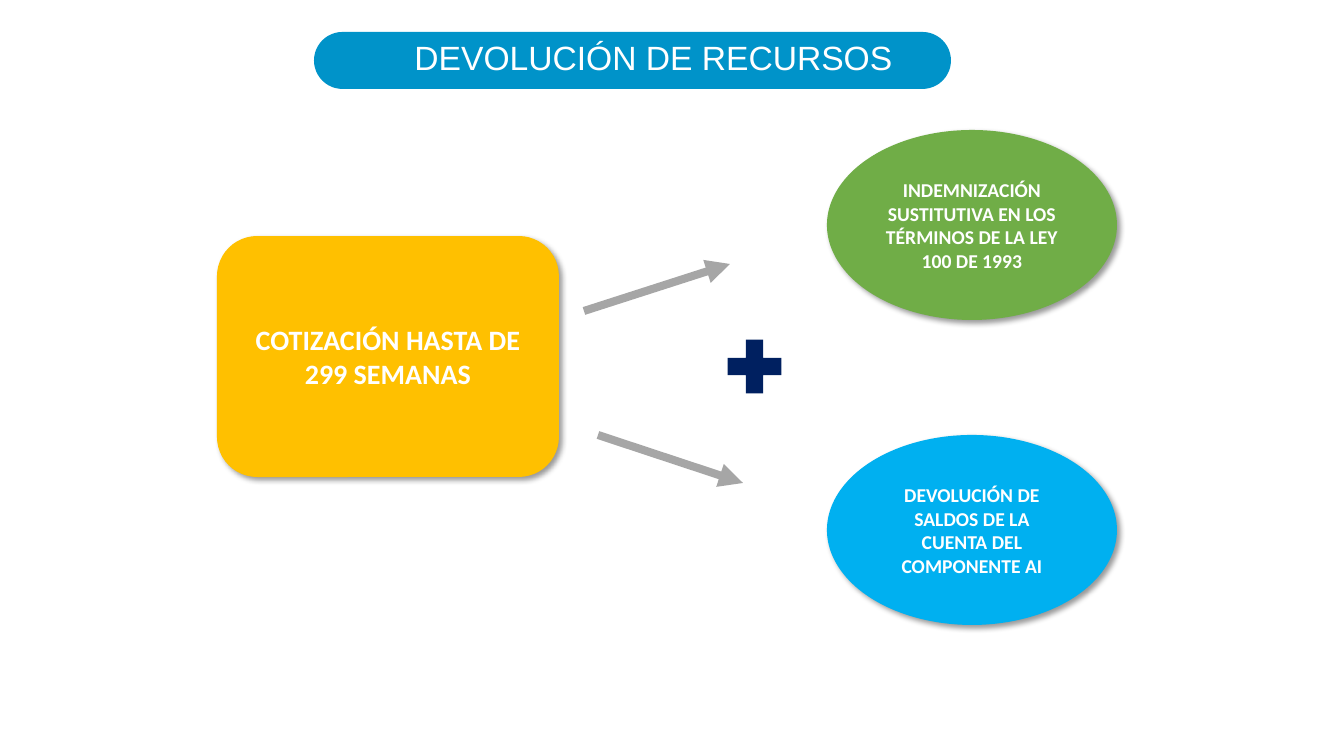
"""Build the slide on the return of pension funds."""
from lxml.etree import SubElement as Sub
from pptx import Presentation
from pptx.dml.color import RGBColor
from pptx.enum.shapes import MSO_CONNECTOR as Line, MSO_SHAPE as Kind
from pptx.enum.text import MSO_ANCHOR as Anchor, MSO_AUTO_SIZE as Fit, PP_ALIGN as Align
from pptx.oxml.ns import qn
from pptx.util import Pt

SCALE = 914400 / 100.8


def px(*nums):
    return [round(num * SCALE) for num in nums]


def paint(color, value):
    color.rgb = RGBColor.from_string(value)


def write(shape, text, size=14, font="Calibri", bold=True, anchor=Anchor.MIDDLE):
    frame = shape.text_frame
    frame.text = text
    frame.word_wrap = True
    frame.auto_size = Fit.NONE
    frame.vertical_anchor = anchor
    para = frame.paragraphs[0]
    para.alignment = Align.CENTER
    style = para.runs[0].font
    style.size, style.name, style.bold = Pt(size), font, bold
    paint(style.color, "FFFFFF")


def add_form(slide, kind, box, fill):
    shape = slide.shapes.add_shape(kind, *px(*box))
    shape.fill.solid()
    paint(shape.fill.fore_color, fill)
    shape.line.fill.background()
    shape.shadow.inherit = False
    return shape


def add_card(slide, kind, box, fill, text, **style):
    card = add_form(slide, kind, box, fill)
    effects = card.element.spPr.find(qn("a:effectLst"))
    shade = Sub(effects, qn("a:outerShdw"), blurRad=str(Pt(4)), dist=str(Pt(3)),
                dir="2700000", algn="tl", rotWithShape="0")
    color = Sub(shade, qn("a:srgbClr"), val="000000")
    Sub(color, qn("a:alpha"), val="40000")
    write(card, text, **style)


def add_arrow(slide, ends):
    arrow = slide.shapes.add_connector(Line.STRAIGHT, *px(*ends))
    arrow.line.width = Pt(5.75)
    paint(arrow.line.color, "A6A6A6")
    props = arrow.element.spPr
    Sub(props.find(qn("a:ln")), qn("a:tailEnd"), type="triangle")
    Sub(props, qn("a:effectLst"))


def add_title(slide, text):
    bar = add_form(slide, Kind.ROUNDED_RECTANGLE, (314, 32, 637, 57), "0093C9")
    bar.adjustments[0] = 0.5
    title = slide.shapes.title
    title.left, title.top, title.width, title.height = px(335, 32, 637, 50)
    write(title, text, size=24, font="Arial", bold=False, anchor=Anchor.TOP)
    title.element.addprevious(bar.element)


def main():
    deck = Presentation()
    deck.slide_width, deck.slide_height = px(1344, 756)
    slide = deck.slides.add_slide(deck.slide_layouts[5])
    add_title(slide, "DEVOLUCIÓN DE RECURSOS")
    add_card(slide, Kind.ROUNDED_RECTANGLE, (217, 236, 342, 241), "FFC000",
             "COTIZACIÓN HASTA DE 299 SEMANAS", size=20)
    goals = [
        (130, "70AD47", "INDEMNIZACIÓN SUSTITUTIVA EN LOS TÉRMINOS DE LA LEY 100 DE 1993"),
        (435, "00B0F0", "DEVOLUCIÓN DE SALDOS DE LA CUENTA DEL COMPONENTE AI"),
    ]
    for top, fill, text in goals:
        add_card(slide, Kind.OVAL, (827, top, 290, 190), fill, text)
    add_form(slide, Kind.MATH_PLUS, (718, 330, 73, 73), "002060")
    for ends in ((584, 311, 730, 264), (598, 435, 743, 483)):
        add_arrow(slide, ends)
    deck.save("out.pptx")


if __name__ == "__main__":
    main()
